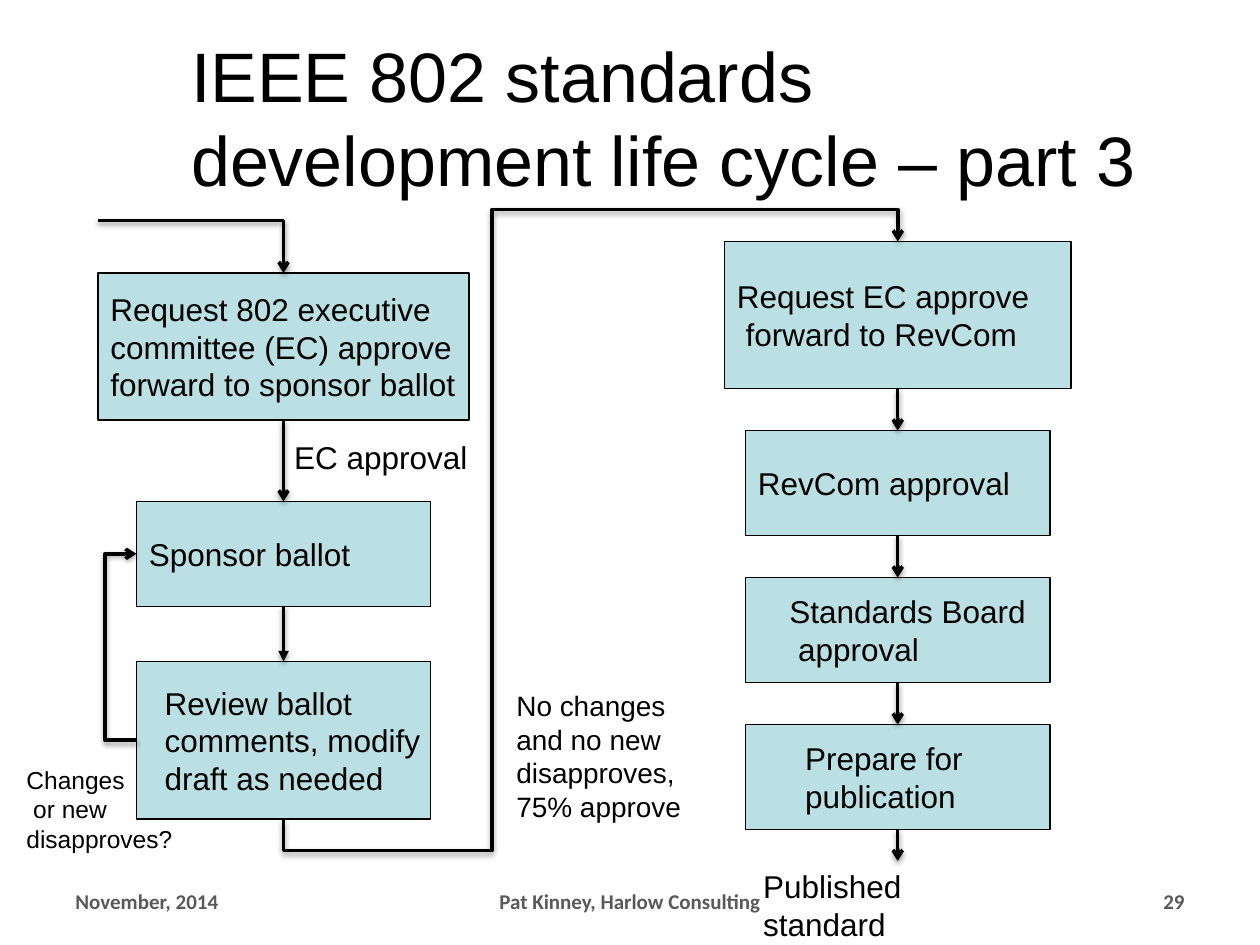
from dataclasses import dataclass

from lxml import etree
from pptx import Presentation
from pptx.dml.color import RGBColor
from pptx.enum.shapes import MSO_CONNECTOR, MSO_SHAPE
from pptx.enum.text import MSO_ANCHOR, MSO_AUTO_SIZE, PP_ALIGN
from pptx.oxml import parse_xml
from pptx.oxml.ns import nsdecls, qn
from pptx.util import Pt

STRAIGHT, ELBOW = MSO_CONNECTOR.STRAIGHT, MSO_CONNECTOR.ELBOW
RECTANGLE = MSO_SHAPE.RECTANGLE
MIDDLE, TOP = MSO_ANCHOR.MIDDLE, MSO_ANCHOR.TOP
LEFT, CENTER, RIGHT = PP_ALIGN.LEFT, PP_ALIGN.CENTER, PP_ALIGN.RIGHT
TITLE_ONLY = 5


@dataclass(frozen=True)
class Theme:
    font: str = "Arial"
    footer_font: str = "Calibri"
    ink: RGBColor = RGBColor(0x00, 0x00, 0x00)
    footer_ink: RGBColor = RGBColor(0x59, 0x59, 0x59)
    step_fill: RGBColor = RGBColor(0xBB, 0xE0, 0xE3)
    title_size: int = 40
    step_size: int = 18
    note_size: int = 16
    small_size: int = 14
    footer_size: int = 12
    outline: float = 0.75
    arrow: float = 2


THEME = Theme()


@dataclass(frozen=True)
class Box:
    left: float
    top: float
    width: float
    height: float

    @property
    def center(self):
        return self.left + self.width / 2

    @property
    def middle(self):
        return self.top + self.height / 2

    @property
    def bottom(self):
        return self.top + self.height

    def inner(self, left, top, width, height):
        """Return a box whose corner is offset from this one's."""
        return Box(self.left + left, self.top + top, width, height)

    def lengths(self):
        return [Pt(value) for value in (self.left, self.top, self.width, self.height)]


def write_text(frame, text, size, anchor=TOP, align=LEFT, indent=0, wrap=True,
               font=THEME.font, color=THEME.ink, bold=False):
    frame.text = text
    frame.word_wrap = wrap
    frame.auto_size = MSO_AUTO_SIZE.NONE
    frame.vertical_anchor = anchor
    for paragraph in frame.paragraphs:
        paragraph.alignment = align
        paragraph.font.name = font
        paragraph.font.size = Pt(size)
        paragraph.font.bold = bold
        paragraph.font.color.rgb = color
        if indent:
            properties = paragraph._p.get_or_add_pPr()
            properties.set("marL", str(Pt(indent)))
            properties.set("indent", "0")


def add_label(slide, box, text, size, **style):
    label = slide.shapes.add_textbox(*box.lengths())
    write_text(label.text_frame, text, size, **style)


def add_step(slide, box, text, indent=0):
    step = slide.shapes.add_shape(RECTANGLE, *box.lengths())
    step.shadow.inherit = False
    step.fill.solid()
    step.fill.fore_color.rgb = THEME.step_fill
    step.line.color.rgb = THEME.ink
    step.line.width = Pt(THEME.outline)
    write_text(step.text_frame, text, THEME.step_size, MIDDLE, indent=indent, wrap=False)


def add_arrow(slide, begin, end, kind=STRAIGHT, head="arrow"):
    connector = slide.shapes.add_connector(kind, *(Pt(value) for value in (*begin, *end)))
    connector.line.color.rgb = THEME.ink
    connector.line.width = Pt(THEME.arrow)
    etree.SubElement(connector.line._get_or_add_ln(), qn("a:tailEnd"), type=head)
    connector._element.spPr.append(parse_xml(
        f'<a:effectLst {nsdecls("a")}>'
        f'<a:outerShdw blurRad="{Pt(3.1)}" dist="{Pt(1.6)}" dir="5400000" rotWithShape="0">'
        '<a:srgbClr val="000000"><a:alpha val="38000"/></a:srgbClr>'
        '</a:outerShdw></a:effectLst>'))
    return connector


def add_elbow(slide, begin, end, preset, adjustments=(), quarter_turn=False):
    """Add a bent arrow; adjustments are fractions of its length."""
    if quarter_turn:
        center_x, center_y = (begin[0] + end[0]) / 2, (begin[1] + end[1]) / 2
        across, down = begin[0] - center_x, begin[1] - center_y
        begin = center_x + down, center_y - across
        end = center_x - down, center_y + across
    connector = add_arrow(slide, begin, end, ELBOW)
    properties = connector._element.spPr
    if quarter_turn:
        properties.find(qn("a:xfrm")).set("rot", "5400000")
    geometry = properties.find(qn("a:prstGeom"))
    geometry.set("prst", preset)
    guides = geometry.find(qn("a:avLst"))
    for number, fraction in enumerate(adjustments, 1):
        etree.SubElement(guides, qn("a:gd"), name=f"adj{number}",
                         fmla=f"val {round(fraction * 100000)}")


def set_title(slide, box):
    title = slide.shapes.title
    title.left, title.top, title.width, title.height = box.lengths()
    write_text(title.text_frame, "IEEE 802 standards development life cycle – part 3",
               THEME.title_size, MIDDLE)


def draw_ballot_column(slide, box):
    """Draw the sponsor ballot loop and return its last step's box."""
    request = box.inner(0, 30, box.width, 84)
    ballot = box.inner(22, 160.5, 168, 60)
    review = box.inner(22, 252, 168, 90)
    add_step(slide, request,
             "Request 802 executive\vcommittee (EC) approve\vforward to sponsor ballot")
    add_step(slide, ballot, "Sponsor ballot")
    add_step(slide, review, "Review ballot\ncomments, modify \vdraft as needed", indent=9)
    add_label(slide, box.inner(105, 121, 115, 29), "EC approval", THEME.step_size, wrap=False)
    add_label(slide, box.inner(-48, 307.5, 104, 58), "Changes\v or new disapproves?",
              THEME.small_size)

    add_elbow(slide, (box.left, box.top), (request.center, request.top), "bentConnector2")
    add_arrow(slide, (request.center, request.bottom), (ballot.center, ballot.top))
    add_arrow(slide, (ballot.center, ballot.bottom), (review.center, review.top),
              head="triangle")
    sliver, reach = 0.5, 18
    add_elbow(slide, (review.left + sliver, review.middle), (ballot.left, ballot.middle),
              "bentConnector3", [reach / sliver])
    return review


def draw_approval_column(slide, box):
    """Draw the approval chain and return its first step's box."""
    gap, small_width, small_height = 24, 174, 60
    first = box.inner(0, 0, box.width, 84)
    add_step(slide, first, "Request EC approve\n forward to RevCom")
    previous = first
    for text, indent in (("RevCom approval", 0),
                         ("Standards Board\n approval", 18),
                         ("Prepare for \vpublication", 27)):
        step = Box(box.center - small_width / 2, previous.bottom + gap,
                   small_width, small_height)
        add_step(slide, step, text, indent)
        add_arrow(slide, (box.center, previous.bottom), (box.center, step.top))
        previous = step
    add_arrow(slide, (box.center, previous.bottom), (box.center, box.bottom))
    add_label(slide, box.inner(15, box.height, 166, 48), "Published standard",
              THEME.step_size)
    return first


def draw_crossing(slide, box, review, request):
    """Lead from the ballot loop to the approvals, with the condition in the box."""
    add_label(slide, box, "No changes and no new\vdisapproves, 75% approve", THEME.note_size)
    begin, end = (review.center, review.bottom), (request.center, request.top)
    overshoot = 18 / (begin[1] - end[1])
    across = (box.left - 7 - begin[0]) / (end[0] - begin[0])
    add_elbow(slide, begin, end, "bentConnector5",
              [-overshoot, across, 1 + overshoot], quarter_turn=True)


def draw_footer(slide, box):
    for left, width, align, text in (
            (0, 168, LEFT, "November, 2014"),
            (210, 228, CENTER, "Pat Kinney, Harlow Consulting"),
            (box.width - 168, 168, RIGHT, "29")):
        add_label(slide, box.inner(left, 0, width, box.height), text, THEME.footer_size,
                  anchor=MIDDLE, align=align, font=THEME.footer_font,
                  color=THEME.footer_ink, bold=True)


def main():
    presentation = Presentation()
    presentation.slide_width, presentation.slide_height = Pt(720), Pt(540)
    slide = presentation.slides.add_slide(presentation.slide_layouts[TITLE_ONLY])
    set_title(slide, Box(102, 15, 582, 103))
    review = draw_ballot_column(slide, Box(56, 126, 212, 342))
    request = draw_approval_column(slide, Box(414, 138, 198, 354))
    draw_crossing(slide, Box(288, 390, 126, 84), review, request)
    draw_footer(slide, Box(36, 500.5, 648, 28.75))
    presentation.save("out.pptx")


if __name__ == "__main__":
    main()
